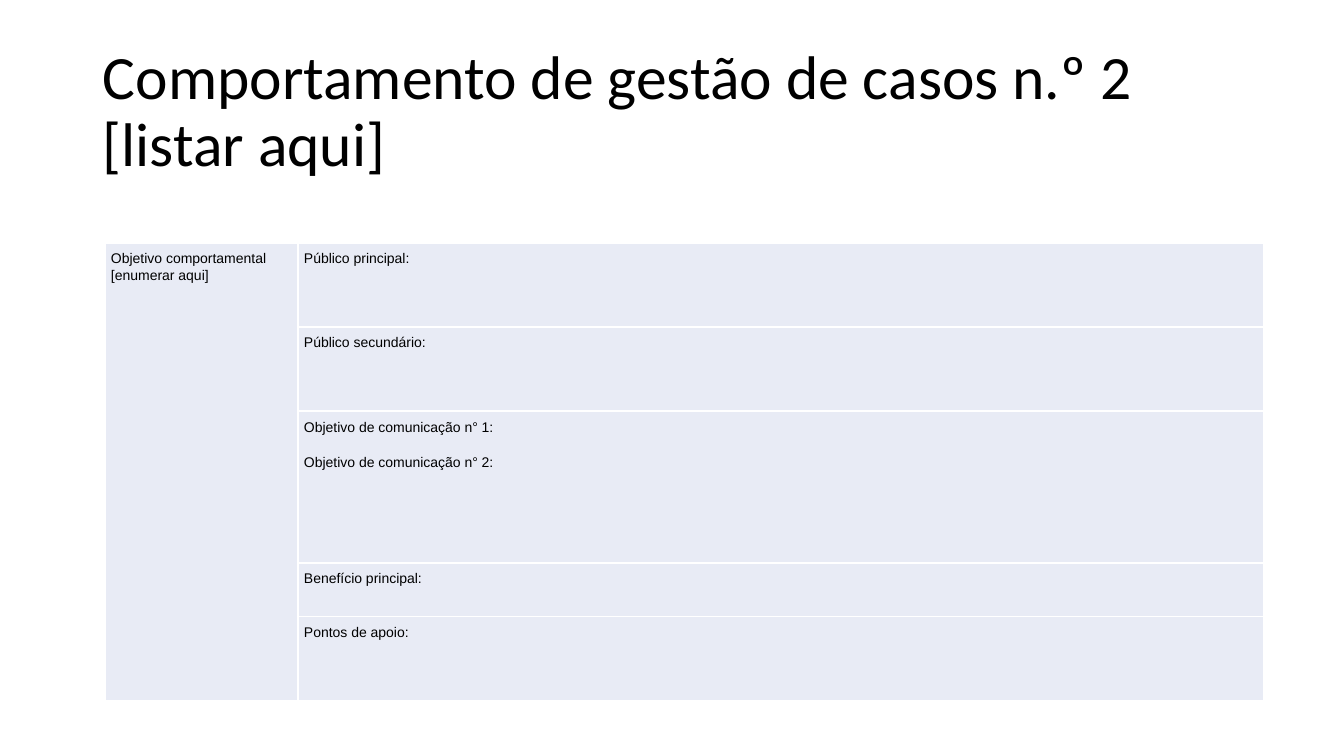
from lxml import etree
from pptx import Presentation
from pptx import util as u
from pptx.dml.color import RGBColor
from pptx.enum import text
from pptx.oxml.ns import qn

TITLE = "Comportamento de gestão de casos n.º 2 [listar aqui]"
OBJECTIVE = "Objetivo comportamental [enumerar aqui]"
PLAN = [
    (84, 1.06, ["Público principal:"]),
    (84, 1.06, ["Público secundário:"]),
    (152, 1.15, ["Objetivo de comunicação n° 1:", "Objetivo de comunicação n° 2:"]),
    (54, 1.06, ["Benefício principal:"]),
    (84, 1.06, ["Pontos de apoio:"]),
]
COLUMNS = [193, 966]
TITLE_BOX = (93, 40, 1159, 146)
PLAN_CORNER = (105, 243)
COLORS = {"text": "000000", "cell": "E8EBF5", "border": "FFFFFF"}


def px(length):
    return round(length * 914400 / 100.8)


def style(paragraph, font, size, spacing):
    paragraph.font.name = font
    paragraph.font.size = u.Pt(size)
    paragraph.font.color.rgb = RGBColor.from_string(COLORS["text"])
    paragraph.line_spacing = spacing


def add_borders(cell):
    props = cell._tc.get_or_add_tcPr()
    for position, side in enumerate(("a:lnL", "a:lnR", "a:lnT", "a:lnB")):
        line = etree.Element(qn(side), w=str(u.Pt(1)))
        fill = etree.SubElement(line, qn("a:solidFill"))
        etree.SubElement(fill, qn("a:srgbClr"), val=COLORS["border"])
        props.insert(position, line)


def fill_cell(cell, lines, spacing):
    cell.fill.solid()
    cell.fill.fore_color.rgb = RGBColor.from_string(COLORS["cell"])
    cell.margin_left, cell.margin_right = px(6), px(4)
    cell.margin_top = cell.margin_bottom = px(7)
    add_borders(cell)
    cell.text = "\n".join(lines)
    for index, paragraph in enumerate(cell.text_frame.paragraphs):
        style(paragraph, "Arial", 10, 1.06 if index else spacing)
        if index:
            paragraph.space_before = u.Pt(13)


def main():
    deck = Presentation()
    deck.slide_width, deck.slide_height = px(1344), px(756)
    slide = deck.slides.add_slide(deck.slide_layouts[6])

    title = slide.shapes.add_textbox(*map(px, TITLE_BOX)).text_frame
    title.word_wrap = True
    title.vertical_anchor = text.MSO_ANCHOR.MIDDLE
    title.text = TITLE
    style(title.paragraphs[0], "Calibri", 44, 0.9)

    heights = [height for height, _, _ in PLAN]
    plan = slide.shapes.add_table(
        len(PLAN), len(COLUMNS), *map(px, PLAN_CORNER),
        px(sum(COLUMNS)), px(sum(heights))).table
    plan.first_row = plan.horz_banding = False
    for column, width in zip(plan.columns, COLUMNS):
        column.width = px(width)
    for index, (height, spacing, lines) in enumerate(PLAN):
        plan.rows[index].height = px(height)
        fill_cell(plan.cell(index, 0), [] if index else [OBJECTIVE], 1.06)
        fill_cell(plan.cell(index, 1), lines, spacing)
    plan.cell(0, 0).merge(plan.cell(len(PLAN) - 1, 0))

    deck.save("out.pptx")


if __name__ == "__main__":
    main()
